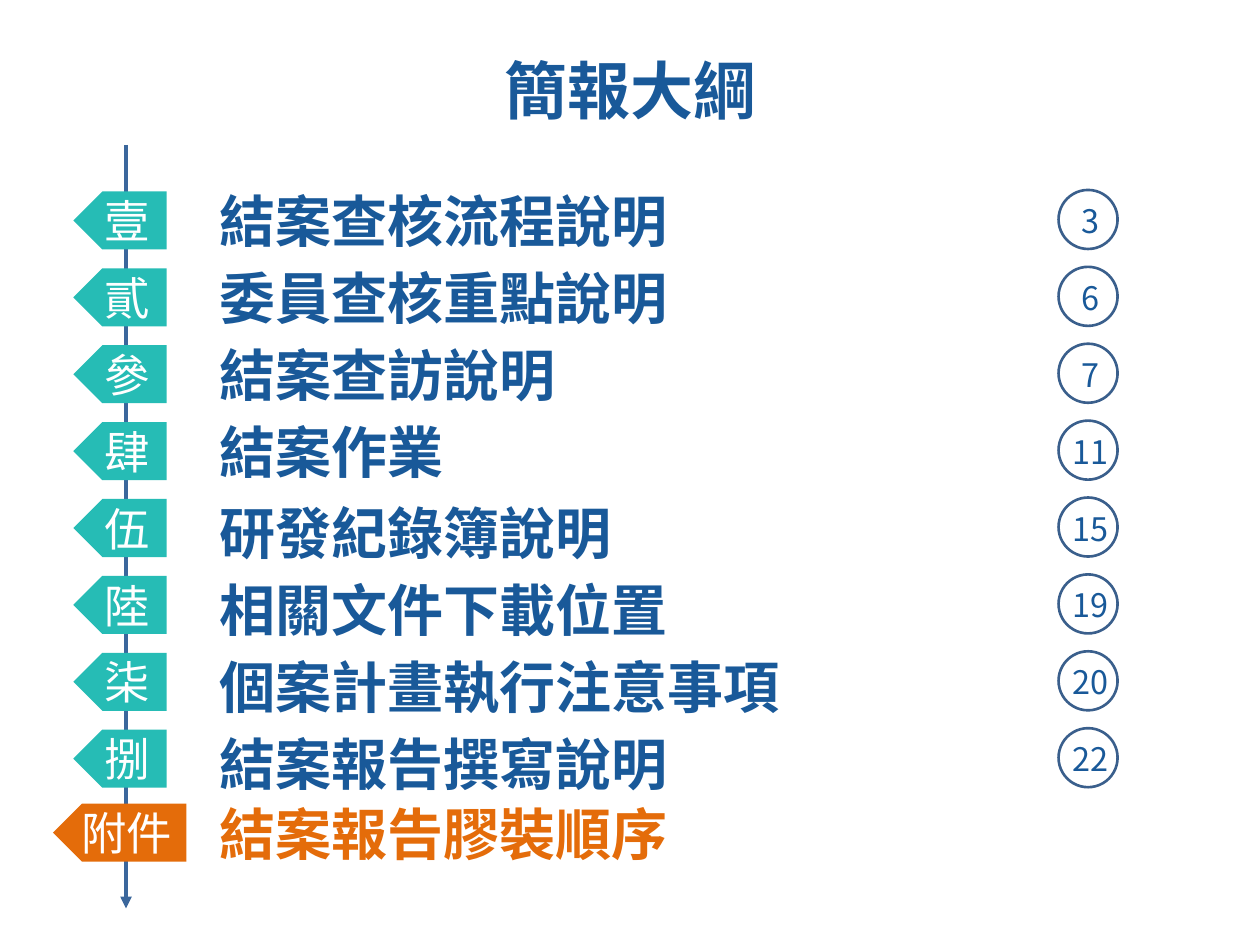
from lxml import etree
from pptx import Presentation
from pptx.dml.color import RGBColor
from pptx.enum.shapes import MSO_CONNECTOR, MSO_SHAPE
from pptx.enum.text import MSO_ANCHOR, PP_ALIGN
from pptx.oxml.ns import qn
from pptx.util import Cm, Pt

PENTAGON, OVAL = MSO_SHAPE.PENTAGON, MSO_SHAPE.OVAL
STRAIGHT = MSO_CONNECTOR.STRAIGHT
TOP, MIDDLE = MSO_ANCHOR.TOP, MSO_ANCHOR.MIDDLE
LEFT, CENTER = PP_ALIGN.LEFT, PP_ALIGN.CENTER

COLORS = {
    "heading": "195999",
    "tag": "26BCB5",
    "appendix": "E46C0A",
    "ring": "3A5F8C",
    "axis": "3B679C",
    "white": "FFFFFF",
}
CJK_FONT = "Noto Sans CJK SC"
TOPICS = [
    ("壹", "結案查核流程說明", "3"),
    ("貳", "委員查核重點說明", "6"),
    ("參", "結案查訪說明", "7"),
    ("肆", "結案作業", "11"),
    ("伍", "研發紀錄簿說明", "15"),
    ("陸", "相關文件下載位置", "19"),
    ("柒", "個案計畫執行注意事項", "20"),
    ("捌", "結案報告撰寫說明", "22"),
]
AXIS_X = 2.54
FIRST_ROW, ROW_PITCH, ROW_HEIGHT = 3.86, 1.55, 1.17
APPENDIX_ROW = 16.2
LOWER_ROWS_START, LOWER_TOPIC_SHIFT = 4, 0.08


def rgb(name):
    return RGBColor.from_string(COLORS[name])


def write(shape, text, size, color, align, anchor=MIDDLE, bold=False, latin=CJK_FONT):
    frame = shape.text_frame
    frame.text = text
    frame.word_wrap = True
    frame.vertical_anchor = anchor
    paragraph = frame.paragraphs[0]
    paragraph.alignment = align
    font = paragraph.runs[0].font
    font.size, font.bold, font.name = Pt(size), bold, latin
    font.color.rgb = rgb(color)
    east_asian = etree.Element(qn("a:ea"), typeface=CJK_FONT)
    font._element.find(qn("a:latin")).addnext(east_asian)


def clear_insets(shape):
    frame = shape.text_frame
    frame.margin_left = frame.margin_right = 0
    frame.margin_top = frame.margin_bottom = 0


def add_title(slide, left, top, width, height):
    title = slide.shapes.title
    title.left, title.top = Cm(left), Cm(top)
    title.width, title.height = Cm(width), Cm(height)
    write(title, "簡報大綱", 36, "heading", CENTER, bold=True, latin="Arial")
    clear_insets(title)


def add_axis(slide, x, top, height):
    axis = slide.shapes.add_connector(STRAIGHT, Cm(x), Cm(top), Cm(x), Cm(top + height))
    axis.line.color.rgb = rgb("axis")
    axis.line.width = Pt(2.25)
    etree.SubElement(axis.line._get_or_add_ln(), qn("a:tailEnd"), type="triangle")
    etree.SubElement(axis._element.spPr, qn("a:effectLst"))


def add_tag(slide, label, left, top, width, color):
    tag = slide.shapes.add_shape(PENTAGON, Cm(left), Cm(top), Cm(width), Cm(ROW_HEIGHT))
    tag.shadow.inherit = False
    tag.fill.solid()
    tag.fill.fore_color.rgb = rgb(color)
    tag.line.fill.background()
    tag._element.spPr.xfrm.set("flipH", "1")
    write(tag, label, 25.9, "white", CENTER)
    clear_insets(tag)


def add_topic(slide, topic, left, top, color):
    box = slide.shapes.add_textbox(Cm(left), Cm(top), Cm(15.82), Cm(ROW_HEIGHT))
    write(box, topic, 32, color, LEFT, bold=True)


def add_page_badge(slide, page, left, top):
    badge = slide.shapes.add_group_shape()
    ring = badge.shapes.add_shape(OVAL, Cm(left), Cm(top), Cm(1.19), Cm(1.19))
    ring.shadow.inherit = False
    ring.fill.background()
    ring.line.color.rgb = rgb("ring")
    ring.line.width = Pt(1.5)
    number = badge.shapes.add_textbox(Cm(left - 0.1), Cm(top + 0.1), Cm(1.5), Cm(1.04))
    write(number, page, 18.5, "heading", CENTER, anchor=TOP)


def add_outline(slide, left, top):
    for index, (label, topic, page) in enumerate(TOPICS):
        row_top = top + index * ROW_PITCH
        shift = LOWER_TOPIC_SHIFT if index >= LOWER_ROWS_START else 0
        add_tag(slide, label, left, row_top, 1.88, "tag")
        add_topic(slide, topic, left + 2.69, row_top + shift, "heading")
        add_page_badge(slide, page, left + 19.86, row_top - 0.03)


def add_appendix(slide, left, top):
    add_tag(slide, "附件", left, top, 2.69, "appendix")
    add_topic(slide, "結案報告膠裝順序", left + 3.1, top, "appendix")


def main():
    presentation = Presentation()
    presentation.slide_width, presentation.slide_height = Cm(25.4), Cm(19.05)
    slide = presentation.slides.add_slide(presentation.slide_layouts[5])
    add_title(slide, 0, 0.69, 25.4, 2.21)
    add_axis(slide, AXIS_X, 2.92, 15.39)
    add_outline(slide, 1.48, FIRST_ROW)
    add_appendix(slide, 1.07, APPENDIX_ROW)
    presentation.save("out.pptx")


if __name__ == "__main__":
    main()
